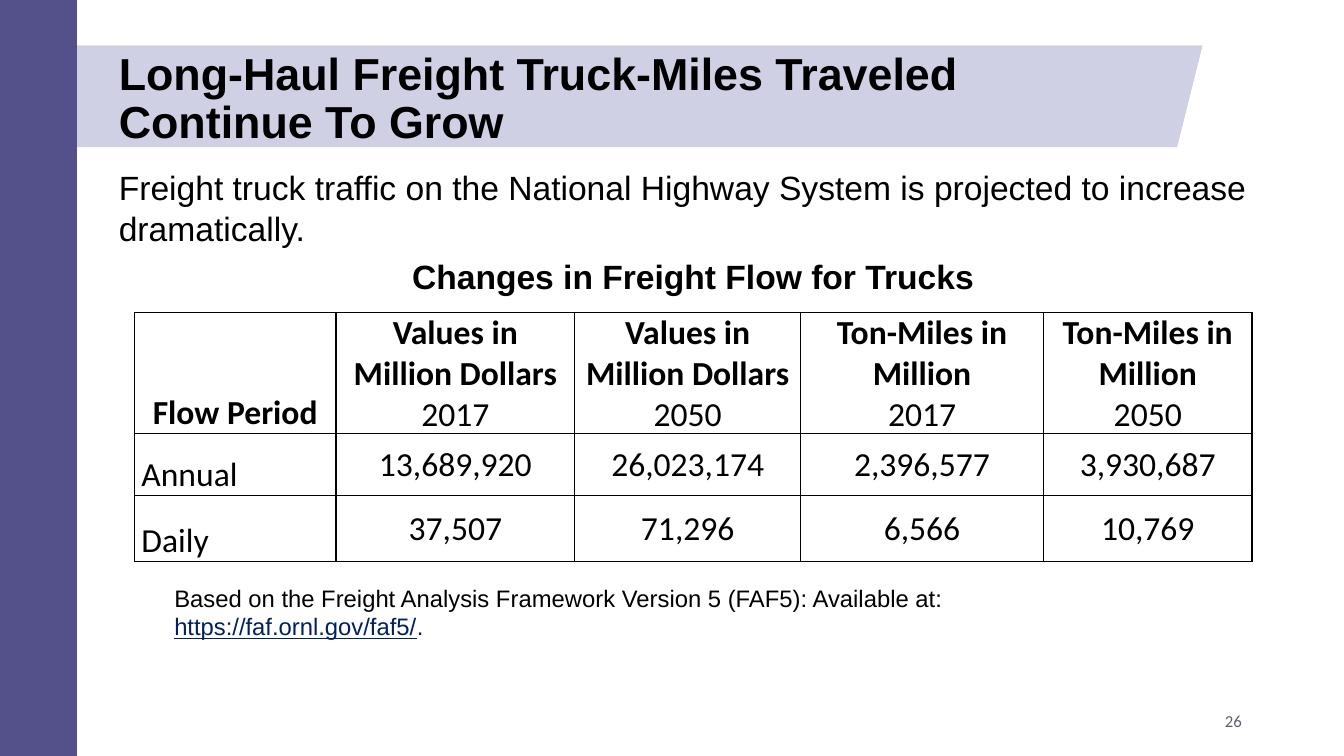
from lxml import etree
from pptx import Presentation
from pptx import util as u
from pptx.dml.color import RGBColor
from pptx.enum import shapes, text
from pptx.oxml import parse_xml
from pptx.oxml.ns import nsdecls

Pt = u.Pt
LEFT, CENTER, RIGHT = text.PP_ALIGN.LEFT, text.PP_ALIGN.CENTER, text.PP_ALIGN.RIGHT
TOP, MIDDLE, BOTTOM = text.MSO_ANCHOR.TOP, text.MSO_ANCHOR.MIDDLE, text.MSO_ANCHOR.BOTTOM


def color(value):
    return RGBColor.from_string(value)


def add_run(paragraph, words, size, face="Arial", ink="000000", bold=False, underline=False):
    run = paragraph.add_run()
    run.text = words
    look = {"size": Pt(size), "name": face, "bold": bold, "underline": underline}
    for key, value in look.items():
        setattr(run.font, key, value)
    run.font.color.rgb = color(ink)


deck = Presentation()
deck.slide_width, deck.slide_height = Pt(960), Pt(540)
slide = deck.slides.add_slide(deck.slide_layouts[6])

bands = [
    (shapes.MSO_SHAPE.PARALLELOGRAM, 17.3, 32.4, 841.7, 72.7, "CFD0E3"),
    (shapes.MSO_SHAPE.RECTANGLE, 0, 0, 54.9, 540, "53508A"),
]
for outline, left, top, width, height, tint in bands:
    band = slide.shapes.add_shape(outline, Pt(left), Pt(top), Pt(width), Pt(height))
    band.shadow.inherit = False
    band.fill.solid()
    band.fill.fore_color.rgb = color(tint)
    band.line.fill.background()

texts = [
    ((77.8, 33.1, 751.7, 39.6), TOP, LEFT, 0.9,
     [("Long-Haul Freight Truck-Miles Traveled Continue To Grow", {"size": 32, "bold": True})]),
    ((77.8, 115.9, 856.8, 65.5), TOP, LEFT, 1,
     [("Freight truck traffic on the National Highway System is projected to increase dramatically.",
       {"size": 24})]),
    ((287.3, 179.3, 427, 36), TOP, LEFT, 1,
     [("Changes in Freight Flow for Trucks", {"size": 24, "bold": True})]),
    ((117.4, 413.3, 724.3, 48.2), TOP, LEFT, 1,
     [("Based on the Freight Analysis Framework Version 5 (FAF5): Available at: ", {"size": 17}),
      ("https://faf.ornl.gov/faf5/", {"size": 17, "ink": "002060", "underline": True}),
      (".", {"size": 17, "ink": "002060"})]),
    ((678.2, 500.4, 216, 28.8), MIDDLE, RIGHT, 1,
     [("26", {"size": 12, "face": "Calibri", "ink": "5B616B"})]),
]
for place, anchor, align, spacing, runs in texts:
    frame = slide.shapes.add_textbox(*map(Pt, place)).text_frame
    frame.word_wrap = True
    frame.vertical_anchor = anchor
    paragraph = frame.paragraphs[0]
    paragraph.alignment = align
    paragraph.line_spacing = spacing
    for words, look in runs:
        add_run(paragraph, words, **look)

flows = [
    [["Flow Period"], ["Values in Million Dollars", "2017"], ["Values in Million Dollars", "2050"],
     ["Ton-Miles in Million", "2017"], ["Ton-Miles in Million", "2050"]],
    [["Annual"], ["13,689,920"], ["26,023,174"], ["2,396,577"], ["3,930,687"]],
    [["Daily"], ["37,507"], ["71,296"], ["6,566"], ["10,769"]],
]
column_widths = [144, 170.6, 161.3, 173.5, 149]
row_heights = [86.4, 44.6, 46.8]
flow_table = slide.shapes.add_table(
    len(flows), len(column_widths), Pt(96), Pt(223.2),
    Pt(sum(column_widths)), Pt(sum(row_heights))).table
flow_table.first_row = flow_table.horz_banding = False
for column, width in zip(flow_table.columns, column_widths):
    column.width = Pt(width)
for row, height in zip(flow_table.rows, row_heights):
    row.height = Pt(height)

for r, flow in enumerate(flows):
    for c, lines in enumerate(flow):
        cell = flow_table.cell(r, c)
        layout = {"margin_left": Pt(5), "margin_right": Pt(5), "margin_top": 0, "margin_bottom": 0,
                  "vertical_anchor": BOTTOM if r == 0 or c == 0 else MIDDLE}
        for key, value in layout.items():
            setattr(cell, key, value)
        borders = cell._tc.get_or_add_tcPr()
        for side in ("lnL", "lnR", "lnT", "lnB"):
            borders.append(parse_xml(
                f'<a:{side} {nsdecls("a")} w="{Pt(1)}"><a:solidFill>'
                f'<a:srgbClr val="000000"/></a:solidFill></a:{side}>'))
        cell.fill.background()
        for i, line in enumerate(lines):
            frame = cell.text_frame
            paragraph = frame.add_paragraph() if i else frame.paragraphs[0]
            paragraph.alignment = LEFT if r and c == 0 else CENTER
            add_run(paragraph, line, 24, "Calibri", bold=r == 0 and i == 0)

deck.save("out.pptx")
